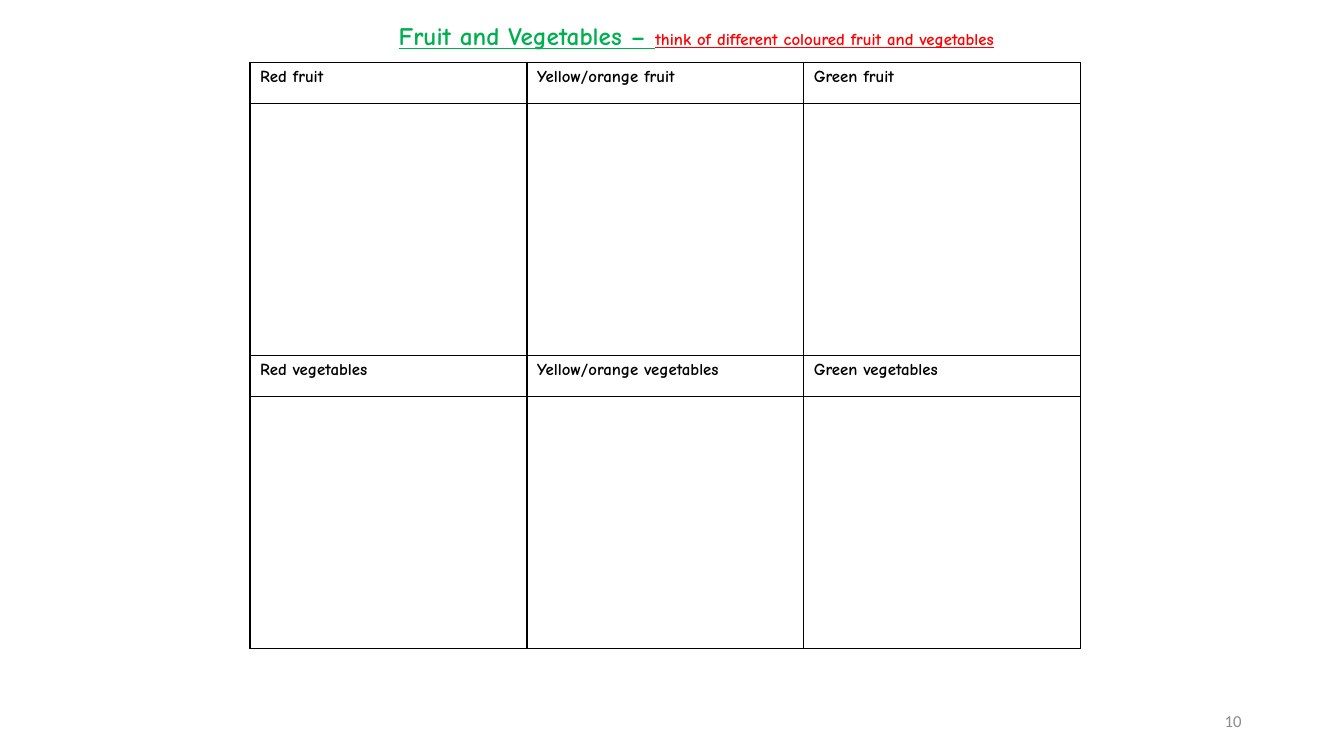
from lxml import etree
from pptx import Presentation
from pptx.dml.color import RGBColor
from pptx.enum.text import MSO_ANCHOR as Anchor, PP_ALIGN as Align
from pptx.oxml.ns import qn
from pptx.util import Pt

COLORS = {"green": "00B050", "red": "FF0000", "black": "000000", "grey": "8C8C8C"}
HAND, PLAIN = "Comic Neue", "Calibri"
TINTS = ["Red", "Yellow/orange", "Green"]
FOODS = ["fruit", "vegetables"]
LABEL_H = 29.3


def add_run(p, text, size, color, font=HAND, bold=True, underline=False):
    r = p.add_run()
    r.text = text
    r.font.name, r.font.size = font, Pt(size)
    r.font.bold, r.font.underline = bold, underline
    r.font.color.rgb = RGBColor.from_string(COLORS[color])


def add_text(slide, box, align, anchor):
    tf = slide.shapes.add_textbox(*map(Pt, box)).text_frame
    tf.word_wrap = True
    tf.vertical_anchor = anchor
    p = tf.paragraphs[0]
    p.alignment = align
    return p


def add_title(slide, box):
    p = add_text(slide, box, Align.CENTER, Anchor.TOP)
    add_run(p, "Fruit and Vegetables – ", 18, "green", underline=True)
    add_run(p, "think of different coloured fruit and vegetables", 12, "red", underline=True)


def add_page_number(slide, box):
    p = add_text(slide, box, Align.RIGHT, Anchor.MIDDLE)
    add_run(p, "10", 12, "grey", PLAIN, bold=False)


def set_borders(cell):
    tc_pr = cell._tc.get_or_add_tcPr()
    for i, side in enumerate(("a:lnL", "a:lnR", "a:lnT", "a:lnB")):
        ln = etree.Element(qn(side), w=str(Pt(1)))
        fill = etree.SubElement(ln, qn("a:solidFill"))
        etree.SubElement(fill, qn("a:srgbClr"), val=COLORS["black"])
        tc_pr.insert(i, ln)


def add_food_table(slide, box):
    height = box[3]
    space_h = height / len(FOODS) - LABEL_H
    frame = slide.shapes.add_table(2 * len(FOODS), len(TINTS), *map(Pt, box))
    table = frame.table
    table.first_row = table.horz_banding = False
    for i, row in enumerate(table.rows):
        row.height = Pt(space_h if i % 2 else LABEL_H)
    for cell in table.iter_cells():
        cell.fill.background()
        set_borders(cell)
    for i, food in enumerate(FOODS):
        for j, tint in enumerate(TINTS):
            p = table.cell(2 * i, j).text_frame.paragraphs[0]
            add_run(p, f"{tint} {food}", 12, "black")


def main():
    prs = Presentation()
    prs.slide_width, prs.slide_height = Pt(960), Pt(540)
    slide = prs.slides.add_slide(prs.slide_layouts[6])
    add_page_number(slide, (678, 500.5, 216, 28.8))
    add_title(slide, (230.4, 10.8, 534.2, 29))
    add_food_table(slide, (178.6, 44.6, 593.4, 418.6))
    prs.save("out.pptx")


if __name__ == "__main__":
    main()
